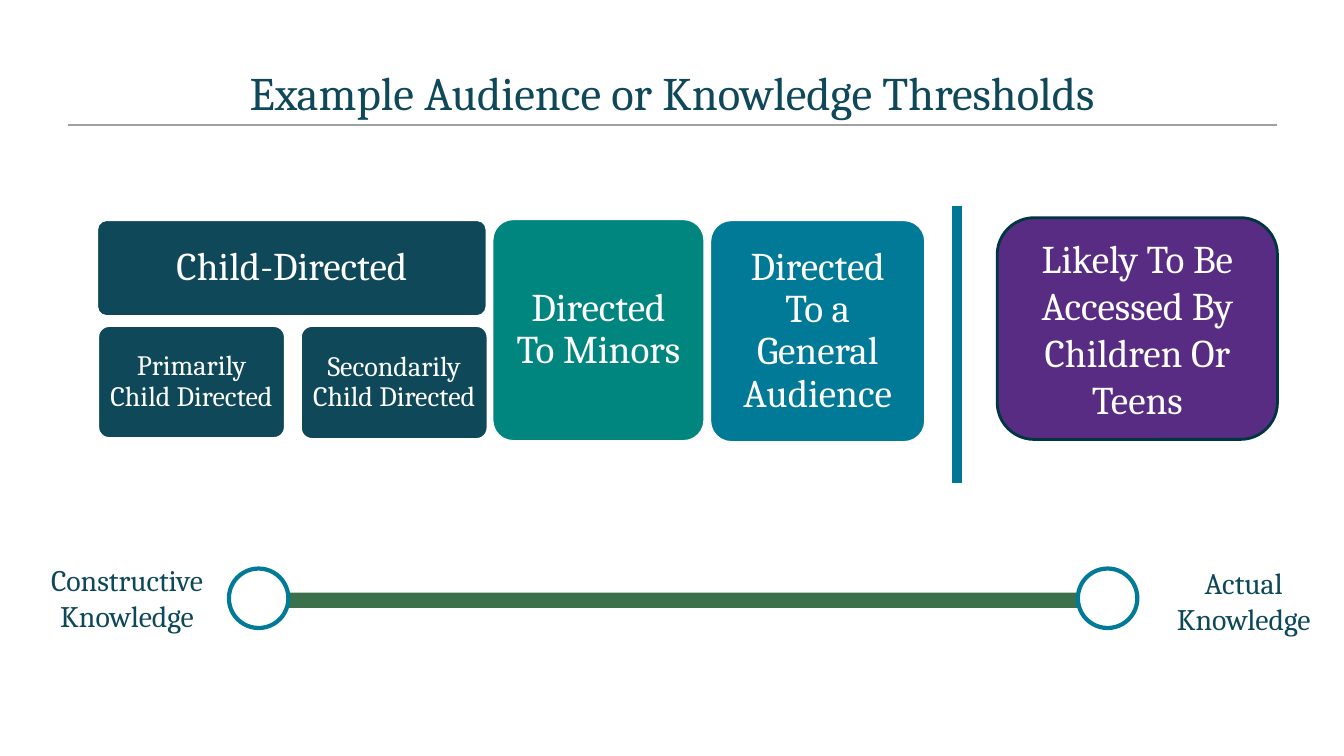
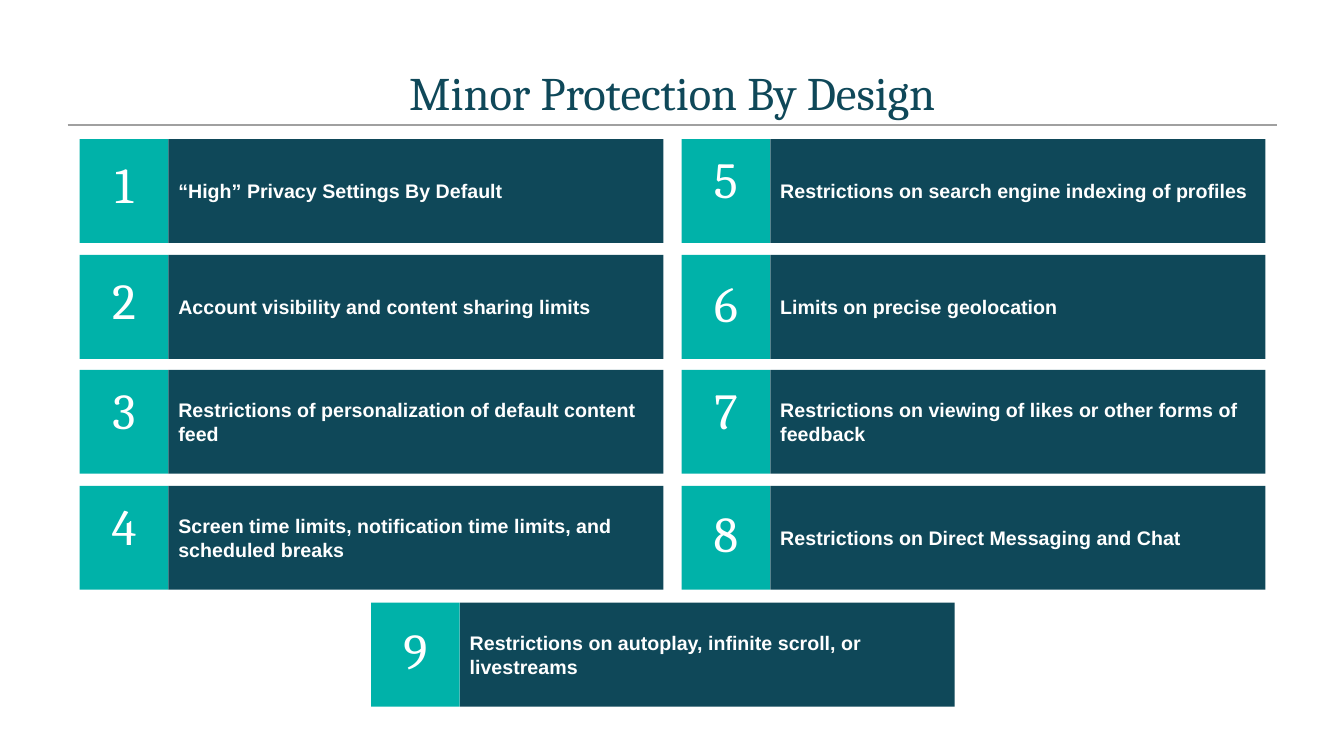
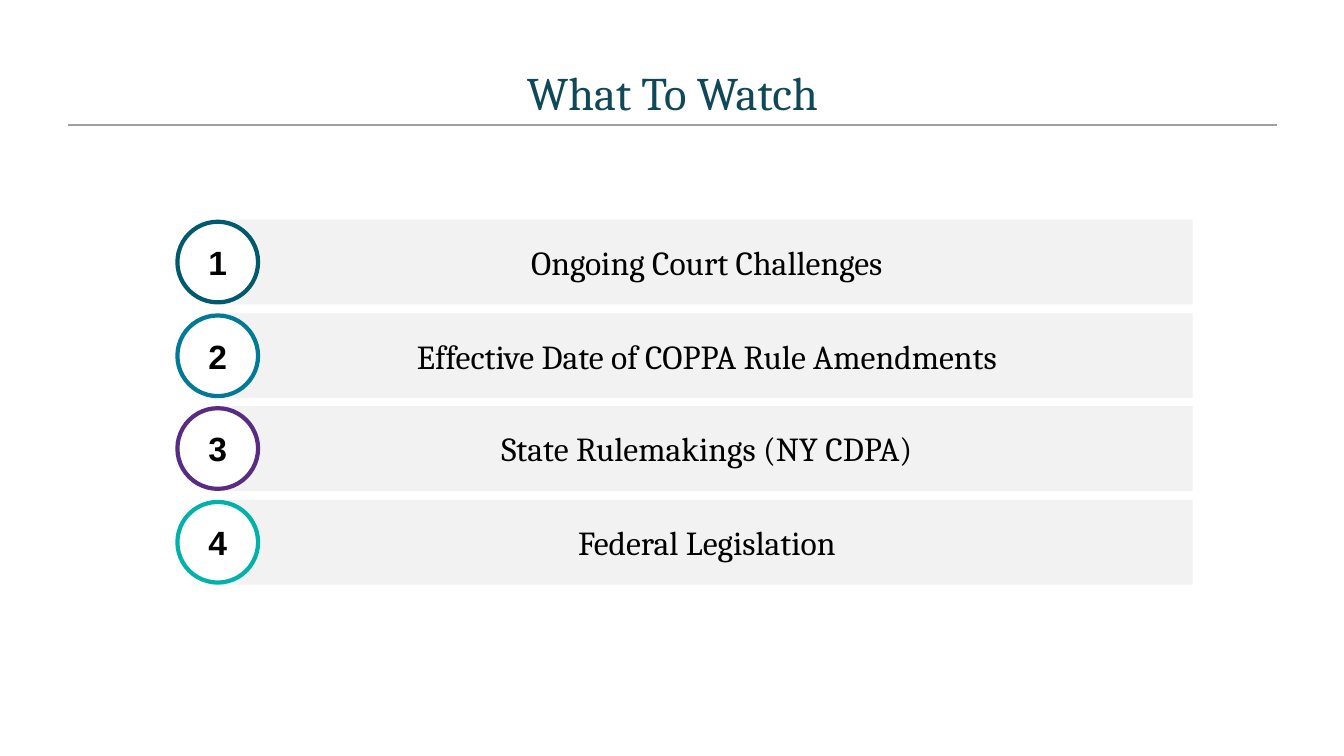
from lxml import etree
from pptx import Presentation
from pptx.dml.color import RGBColor
from pptx.enum.shapes import MSO_CONNECTOR, MSO_SHAPE
from pptx.enum.text import MSO_ANCHOR, PP_ALIGN
from pptx.oxml.ns import qn
from pptx.util import Pt

PX = 9144
SERIF, SANS = "Cambria", "Arial"
RECT, ROUND, OVAL = MSO_SHAPE.RECTANGLE, MSO_SHAPE.ROUNDED_RECTANGLE, MSO_SHAPE.OVAL
STRAIGHT = MSO_CONNECTOR.STRAIGHT
LEFT, CENTER = PP_ALIGN.LEFT, PP_ALIGN.CENTER
TOP, MIDDLE, BOTTOM = MSO_ANCHOR.TOP, MSO_ANCHOR.MIDDLE, MSO_ANCHOR.BOTTOM

WHITE = RGBColor(0xFF, 0xFF, 0xFF)
BLACK = RGBColor(0x00, 0x00, 0x00)
GRAY = RGBColor(0xA0, 0xA0, 0xA0)
PALE = RGBColor(0xF2, 0xF2, 0xF2)
NAVY = RGBColor(0x0F, 0x48, 0x59)
BLUE = RGBColor(0x00, 0x7A, 0x96)
DIVIDER = RGBColor(0x00, 0x77, 0x93)
PETROL = RGBColor(0x00, 0x5A, 0x6F)
INK = RGBColor(0x00, 0x35, 0x42)
GREEN = RGBColor(0x3A, 0x71, 0x4C)
JADE = RGBColor(0x00, 0x86, 0x7F)
TEAL = RGBColor(0x00, 0xB2, 0xA9)
PURPLE = RGBColor(0x58, 0x2C, 0x83)

PAD = (10, 5, 10, 5)
TITLE = dict(size=33.3, color=NAVY, anchor=BOTTOM, pad=(0, 0, 0, 6))
LABEL = dict(size=21.3, color=NAVY, anchor=TOP, pad=(20, 10, 20, 10))
NUMBER = dict(size=36)
MEASURE = dict(size=14, font=SANS, bold=True, align=LEFT)
TOPIC = dict(size=24, color=BLACK)
BADGE = dict(size=24, color=BLACK, font=SANS, bold=True)

THRESHOLDS = [
    ("Child-Directed", (96, 218, 387, 96), NAVY, 28, 15),
    ("Primarily Child Directed", (97, 323, 186, 112), NAVY, 20, 7),
    ("Secondarily Child Directed", (298, 323, 186, 113), NAVY, 20, 7),
    ("Directed To a General Audience", (704, 218, 214, 221), BLUE, 28, 18),
    ("Directed To Minors", (488, 217, 211, 221), JADE, 28, 18),
]
LIKELY = "Likely To Be Accessed By Children Or Teens"
KNOWLEDGE = [
    ("Actual Knowledge", (1134, 550, 199, 92), 1069),
    ("Constructive Knowledge", (19, 547, 214, 92), 227),
]
HIGH, MID, LOW = (10, 5, 10, 30), (10, 5, 10, 20), (10, 10, 10, 20)
MEASURES = [
    ("“High” Privacy Settings By Default", MID),
    ("Account visibility and content sharing limits", MID),
    ("Restrictions of personalization of default content feed", HIGH),
    ("Screen time limits, notification time limits, and scheduled breaks", HIGH),
    ("Restrictions on search engine indexing of profiles", HIGH),
    ("Limits on precise geolocation", LOW),
    ("Restrictions on viewing of likes or other forms of feedback", HIGH),
    ("Restrictions on Direct Messaging and Chat", LOW),
    ("Restrictions on autoplay, infinite scroll, or livestreams", LOW),
]
TOPICS = [
    ("Ongoing Court Challenges", PETROL),
    ("Effective Date of COPPA Rule Amendments", BLUE),
    ("State Rulemakings (NY CDPA)", PURPLE),
    ("Federal Legislation", TEAL),
]


def spread(first, last, count):
    return [round(first + i * (last - first) / (count - 1)) for i in range(count)]


def emu(lengths):
    return [v * PX for v in lengths]


def write(sp, text, size, color=WHITE, font=SERIF, bold=False, align=CENTER,
          anchor=MIDDLE, pad=PAD, spacing=None):
    tf = sp.text_frame
    left, top, right, bottom = emu(pad)
    frame = dict(word_wrap=True, vertical_anchor=anchor, margin_left=left,
                 margin_top=top, margin_right=right, margin_bottom=bottom)
    for name, value in frame.items():
        setattr(tf, name, value)
    p = tf.paragraphs[0]
    p.alignment = align
    if spacing:
        p.line_spacing = spacing
    r = p.add_run()
    r.text = text
    for name, value in dict(size=Pt(size), name=font, bold=bold).items():
        setattr(r.font, name, value)
    r.font.color.rgb = color


def shape(s, kind, box, fill, line=None, width=2, adj=None):
    sp = s.shapes.add_shape(kind, *emu(box))
    sp.shadow.inherit = False
    sp.fill.solid()
    sp.fill.fore_color.rgb = fill
    if line is None:
        sp.line.fill.background()
    else:
        sp.line.color.rgb = line
        sp.line.width = Pt(width)
    if adj is not None:
        sp.adjustments[0] = adj
    return sp


def rule(s, ends, color, width):
    cn = s.shapes.add_connector(STRAIGHT, *emu(ends))
    cn.line.color.rgb = color
    cn.line.width = Pt(width)
    etree.SubElement(cn._element.spPr, qn("a:effectLst"))


def new_slide(prs, title):
    s = prs.slides.add_slide(prs.slide_layouts[6])
    rule(s, (67, 124, 1267, 124), GRAY, 1)
    write(s.shapes.add_textbox(*emu((67, 58, 1200, 67))), title, **TITLE)
    return s


def thresholds(prs):
    s = new_slide(prs, "Example Audience or Knowledge Thresholds")
    shape(s, RECT, (275, 588, 824, 15), GREEN)
    for text, box, dot_x in KNOWLEDGE:
        write(shape(s, RECT, box, WHITE), text, **LABEL)
        shape(s, OVAL, (dot_x, 564, 59, 59), WHITE, BLUE, 3)
    for text, box, fill, size, pad in THRESHOLDS:
        sp = shape(s, ROUND, box, fill, WHITE, adj=0.1)
        write(sp, text, size, pad=(pad,) * 4, spacing=0.9)
    rule(s, (949, 204, 949, 479), DIVIDER, 6.75)
    write(shape(s, ROUND, (989, 216, 278, 220), PURPLE, INK), LIKELY, 28)


def protection(prs):
    s = new_slide(prs, "Minor Protection By Design")
    tops = spread(138, 482, 4)
    spots = [(x, y) for x in (79, 676) for y in tops] + [(368, 598)]
    for number, ((text, pad), (x, y)) in enumerate(zip(MEASURES, spots), 1):
        write(shape(s, RECT, (x, y, 88, 103), TEAL), str(number), pad=pad, **NUMBER)
        write(shape(s, RECT, (x + 88, y, 491, 103), NAVY), text, **MEASURE)


def watch(prs):
    s = new_slide(prs, "What To Watch")
    tops = spread(218, 496, len(TOPICS))
    for number, ((text, color), y) in enumerate(zip(TOPICS, tops), 1):
        write(shape(s, RECT, (219, y, 964, 84), PALE), text, **TOPIC)
        write(shape(s, OVAL, (176, y + 2, 80, 80), WHITE, color, 3), str(number), **BADGE)


def main():
    prs = Presentation()
    prs.slide_width, prs.slide_height = emu((1333, 750))
    for build in (thresholds, protection, watch):
        build(prs)
    prs.save("out.pptx")


if __name__ == "__main__":
    main()
